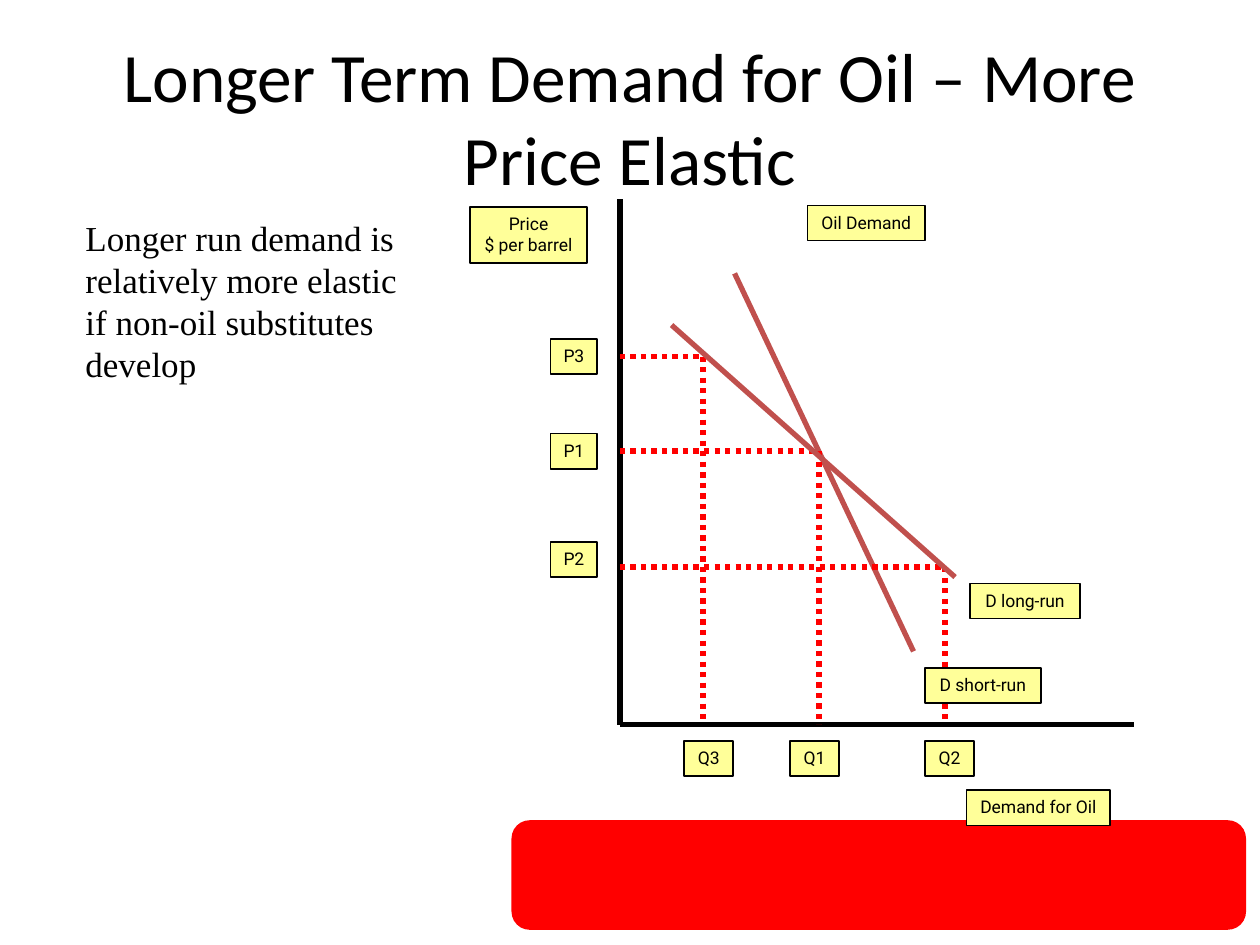
from lxml import etree
from pptx import Presentation
from pptx import util as u
from pptx.dml.color import RGBColor
from pptx.enum import dml, shapes, text
from pptx.oxml.ns import qn

Inches = u.Inches
COLORS = {
    "ink": "000000",
    "label": "FFFF99",
    "demand": "C0504D",
    "guide": "FF0000",
    "banner": "FF0000",
}


def rgb(name):
    return RGBColor.from_string(COLORS[name])


def set_text(frame, lines, font, size, align):
    for index, line in enumerate(lines):
        paragraph = frame.paragraphs[0] if index == 0 else frame.add_paragraph()
        paragraph.text = line
        paragraph.alignment = align
        paragraph.font.name = font
        paragraph.font.size = u.Pt(size)
        paragraph.font.color.rgb = rgb("ink")


def add_copy(slide, left, top, width, height, copy, font, size, align, anchor):
    box = slide.shapes.add_textbox(Inches(left), Inches(top), Inches(width), Inches(height))
    frame = box.text_frame
    frame.word_wrap = True
    frame.vertical_anchor = anchor
    set_text(frame, [copy], font, size, align)


def add_banner(slide, left, top, width, height):
    banner = slide.shapes.add_shape(
        shapes.MSO_SHAPE.ROUNDED_RECTANGLE,
        Inches(left), Inches(top), Inches(width), Inches(height))
    banner.shadow.inherit = False
    banner.fill.solid()
    banner.fill.fore_color.rgb = rgb("banner")
    banner.line.fill.background()


def add_line(slide, start, end, color, dash=None):
    line = slide.shapes.add_connector(
        shapes.MSO_CONNECTOR.STRAIGHT, *(Inches(value) for value in (*start, *end)))
    line.line.color.rgb = rgb(color)
    line.line.width = u.Pt(3)
    if dash:
        line.line.dash_style = dash
    etree.SubElement(line._element.spPr, qn("a:effectLst"))


def add_label(slide, left, top, width, lines, height=0.28, border=1):
    label = slide.shapes.add_shape(
        shapes.MSO_SHAPE.RECTANGLE,
        Inches(left), Inches(top), Inches(width), Inches(height))
    label.shadow.inherit = False
    label.fill.solid()
    label.fill.fore_color.rgb = rgb("label")
    label.line.color.rgb = rgb("ink")
    label.line.width = u.Pt(border)
    frame = label.text_frame
    frame.word_wrap = False
    frame.vertical_anchor = text.MSO_ANCHOR.TOP
    set_text(frame, lines, "Roboto", 10, text.PP_ALIGN.CENTER)


def add_demand_diagram(slide, left, top, width, height):
    """Draw the diagram with its axes on the left and bottom edges of the box."""
    def at(x, y):
        return left + x, top + y

    # Axes
    add_line(slide, at(0, 0), at(0, height), "ink")
    add_line(slide, at(0, height), at(width, height), "ink")

    # Short-run demand lies behind the guides
    add_line(slide, at(0.91, 0.59), at(2.33, 3.59), "demand")

    # Each equilibrium: number, quantity, price, Q label left, P label top
    equilibria = [
        (1, 1.58, 2.0, 1.35, 1.86),
        (2, 2.58, 2.92, 2.42, 2.72),
        (3, 0.66, 1.25, 0.51, 1.11),
    ]
    dots = dml.MSO_LINE.ROUND_DOT
    for number, quantity, price, q_left, p_top in equilibria:
        add_line(slide, at(0, price), at(quantity, price), "guide", dots)
        add_line(slide, at(quantity, price), at(quantity, height), "guide", dots)
        add_label(slide, *at(-0.55, p_top), 0.37, [f"P{number}"])
        add_label(slide, *at(q_left, height + 0.13), 0.39, [f"Q{number}"])

    # Long-run demand lies in front of the guides
    add_line(slide, at(0.41, 1.0), at(2.66, 3.0), "demand")

    # Axis, heading and curve labels
    add_label(slide, *at(-1.19, 0.06), 0.93, ["Price", "$ per barrel"], height=0.45)
    add_label(slide, *at(1.49, 0.05), 0.93, ["Oil Demand"])
    add_label(slide, *at(2.42, 3.72), 0.92, ["D short-run"])
    add_label(slide, *at(2.78, 3.05), 0.87, ["D long-run"])
    add_label(slide, *at(2.75, height + 0.52), 1.14, ["Demand for Oil"], border=0.75)


def main():
    deck = Presentation()
    deck.slide_width, deck.slide_height = Inches(10), Inches(7.5)
    slide = deck.slides.add_slide(deck.slide_layouts[6])

    add_banner(slide, 4.06, 6.51, 5.83, 0.87)
    add_copy(slide, 0.5, 0.3, 9, 1.25,
             "Longer Term Demand for Oil – More Price Elastic",
             "Calibri", 39.6, text.PP_ALIGN.CENTER, text.MSO_ANCHOR.MIDDLE)
    add_demand_diagram(slide, 4.92, 1.58, 4.08, 4.17)
    add_copy(slide, 0.58, 1.67, 2.83, 1.45,
             "Longer run demand is relatively more elastic if non-oil substitutes develop",
             "Times New Roman", 20, text.PP_ALIGN.LEFT, text.MSO_ANCHOR.TOP)

    deck.save("out.pptx")


if __name__ == "__main__":
    main()
